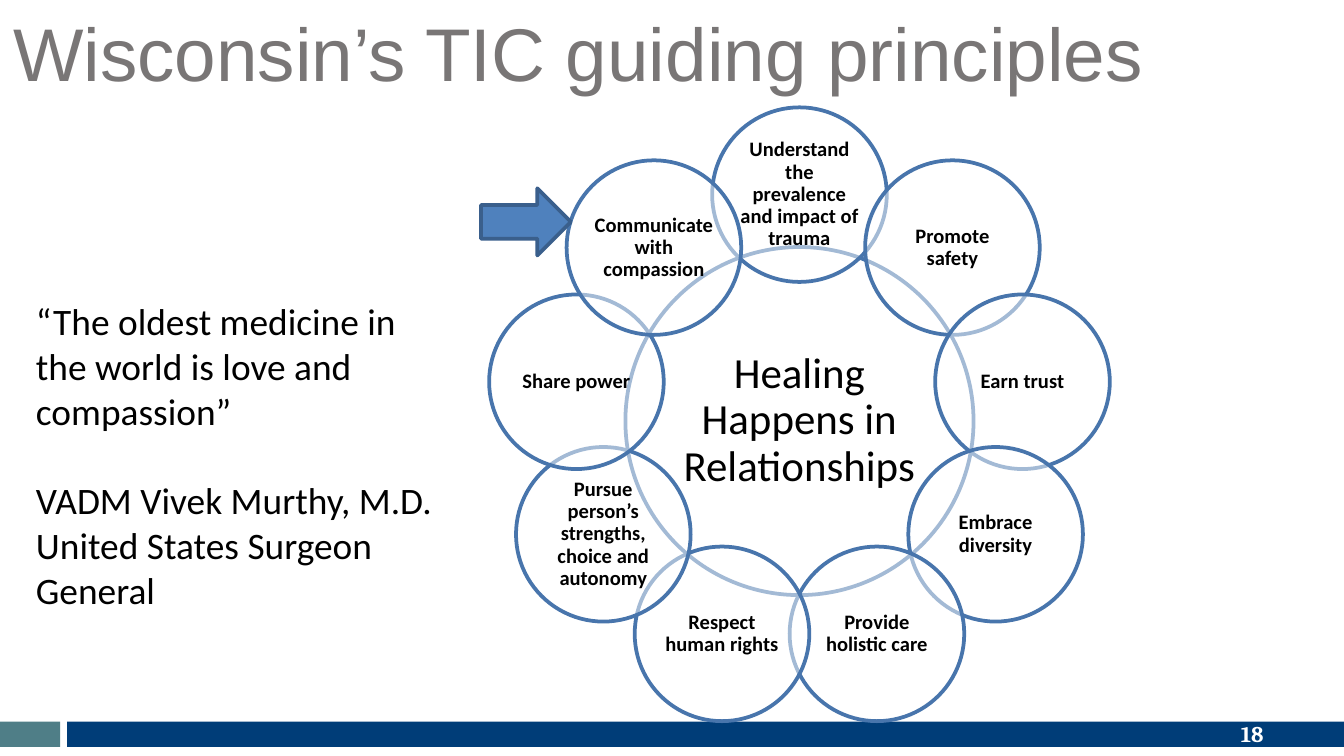
from dataclasses import dataclass
from math import cos, radians, sin

from lxml.etree import SubElement
from pptx import Presentation
from pptx.dml.color import RGBColor
from pptx.enum.shapes import MSO_SHAPE
from pptx.enum.text import MSO_ANCHOR, PP_ALIGN
from pptx.oxml.ns import qn
from pptx.util import Cm, Pt


@dataclass(frozen=True)
class Theme:
    white: str = "FFFFFF"
    black: str = "000000"
    title_grey: str = "797676"
    teal: str = "4F7E87"
    navy: str = "003D78"
    ring_blue: str = "4875AC"
    arrow_fill: str = "4F81BD"
    arrow_line: str = "3A5F8C"
    title_font: str = "Arial"
    body_font: str = "Calibri"
    number_font: str = "Cambria"
    title_size: int = 40
    hub_size: int = 23
    quote_size: int = 20
    number_size: int = 12
    principle_size: int = 11
    line_width: int = 2


class SlideBuilder:
    def __init__(self, slide, theme):
        self.slide = slide
        self.theme = theme

    def shape(self, kind, left, top, width, height, fill, line=None):
        shape = self.slide.shapes.add_shape(kind, Cm(left), Cm(top), Cm(width), Cm(height))
        shape.shadow.inherit = False
        shape.fill.solid()
        shape.fill.fore_color.rgb = RGBColor.from_string(fill)
        if line:
            shape.line.color.rgb = RGBColor.from_string(line)
            shape.line.width = Pt(self.theme.line_width)
        else:
            shape.line.fill.background()
        return shape

    def set_text(self, text_frame, text, size, font, color, bold=False, align=PP_ALIGN.LEFT):
        text_frame.text = text
        for paragraph in text_frame.paragraphs:
            paragraph.alignment = align
            for run in paragraph.runs:
                run.font.size = Pt(size)
                run.font.name = font
                run.font.bold = bold
                run.font.color.rgb = RGBColor.from_string(color)

    def text(self, left, top, width, height, text, size, font, color, wrap=True, **style):
        box = self.slide.shapes.add_textbox(Cm(left), Cm(top), Cm(width), Cm(height))
        box.text_frame.word_wrap = wrap
        self.set_text(box.text_frame, text, size, font, color, **style)
        return box

    def circle(self, center_x, center_y, diameter, text, size, inset, bold=False):
        theme = self.theme
        shape = self.shape(MSO_SHAPE.OVAL, center_x - diameter / 2, center_y - diameter / 2,
                           diameter, diameter, theme.white, theme.ring_blue)
        color = shape.element.spPr.find(qn("a:solidFill"))[0]
        SubElement(color, qn("a:alpha"), val="50000")
        frame = shape.text_frame
        frame.word_wrap = True
        frame.vertical_anchor = MSO_ANCHOR.MIDDLE
        frame.margin_left = frame.margin_right = Cm(inset)
        frame.margin_top = frame.margin_bottom = Cm(inset)
        self.set_text(frame, text, size, theme.body_font, theme.black, bold, PP_ALIGN.CENTER)
        frame.paragraphs[0].line_spacing = 0.9

    def wheel(self, center_x, center_y, radius, hub, principles, nudges):
        theme = self.theme
        self.circle(center_x, center_y, 6.58, hub, theme.hub_size, 0.08)
        for index, principle in enumerate(principles):
            angle = radians(360 / len(principles) * index)
            x = center_x + radius * sin(angle) + nudges.get(principle, 0)
            y = center_y - radius * cos(angle)
            self.circle(x, y, 3.3, principle, theme.principle_size, 0.04, bold=True)


PRINCIPLES = [
    "Understand the prevalence and impact of trauma",
    "Promote safety",
    "Earn trust",
    "Embrace diversity",
    "Provide holistic care",
    "Respect human rights",
    "Pursue person’s strengths, choice and autonomy",
    "Share power",
    "Communicate with compassion",
]
QUOTE = "“The oldest medicine in the world is love and compassion”"
SPEAKER = "VADM Vivek Murthy, M.D.\nUnited States Surgeon General"


def main():
    presentation = Presentation()
    presentation.slide_width = Cm(25.4)
    presentation.slide_height = Cm(14.29)
    theme = Theme()
    builder = SlideBuilder(presentation.slides.add_slide(presentation.slide_layouts[6]), theme)

    builder.shape(MSO_SHAPE.RECTANGLE, 0, 13.64, 1.14, 0.48, theme.teal)
    builder.shape(MSO_SHAPE.RECTANGLE, 1.27, 13.64, 24.13, 0.48, theme.navy)
    number = builder.text(18.21, 13.49, 5.92, 0.76, "18", theme.number_size, theme.number_font,
                          theme.white, bold=True, align=PP_ALIGN.RIGHT)
    number.text_frame.vertical_anchor = MSO_ANCHOR.MIDDLE

    builder.wheel(15.11, 7.96, 4.28, "Healing Happens in Relationships", PRINCIPLES,
                  {"Promote safety": 0.14})

    quote = builder.text(0.43, 5.51, 8.1, 6.25, f"{QUOTE}\n{SPEAKER}", theme.quote_size,
                         theme.body_font, theme.black)
    quote.text_frame.paragraphs[1].space_before = Pt(24)

    title = builder.text(0, 0, 22.07, 1.96, "Wisconsin’s TIC guiding principles",
                         theme.title_size, theme.title_font, theme.title_grey, wrap=False)
    title.fill.solid()
    title.fill.fore_color.rgb = RGBColor.from_string(theme.white)

    builder.shape(MSO_SHAPE.RIGHT_ARROW, 9.09, 3.56, 1.7, 1.27, theme.arrow_fill, theme.arrow_line)
    presentation.save("out.pptx")


if __name__ == "__main__":
    main()
